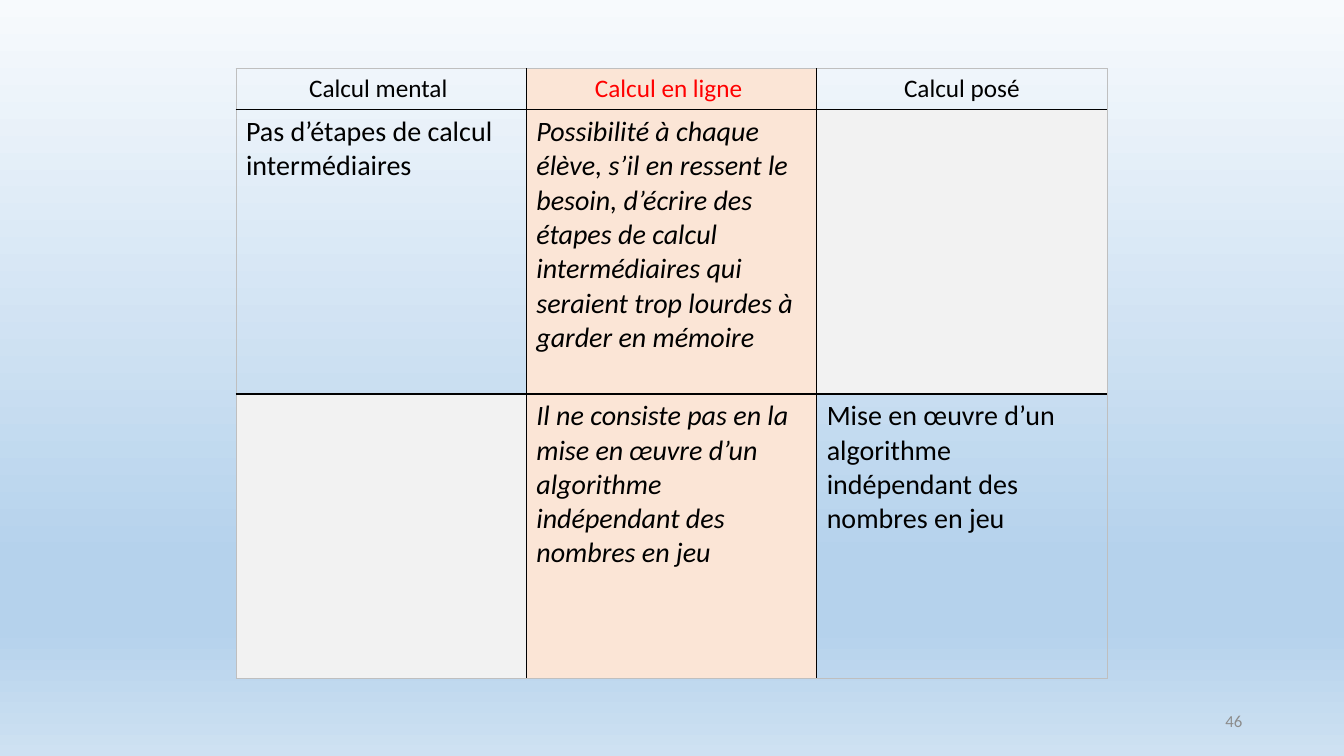
import lxml.etree
import pptx
import pptx.dml.color
import pptx.enum.text
import pptx.oxml
import pptx.oxml.ns
import pptx.util

# Content
HEADERS = ["Calcul mental ", "Calcul en ligne ", "Calcul posé"]
ROWS = [
    HEADERS,
    ["Pas d’étapes de calcul intermédiaires",
     "Possibilité à chaque élève, s’il en ressent le besoin, d’écrire des étapes de calcul "
     "intermédiaires qui seraient trop lourdes à garder en mémoire",
     ""],
    ["",
     "Il ne consiste pas en la mise en œuvre d’un algorithme indépendant des nombres en jeu",
     "Mise en œuvre d’un algorithme indépendant des nombres en jeu"],
]
PAGE_NUMBER = "46"

# Style and layout, in inches and points
FONT = "Calibri"
BLACK, RED, GREY = "000000", "FF0000", "8C8C8C"
HIGHLIGHT, EMPTY_CELL, OUTER_BORDER = "FBE5D6", "F2F2F2", "BFBFBF"
BACKGROUND_STOPS = [(0, "F7FAFD"), (74, "B5D2EC"), (83, "B5D2EC"), (100, "CEE1F2")]
TABLE_LEFT, TABLE_TOP = 2.34, 0.68
COLUMN_WIDTH = 2.88
ROW_HEIGHTS = [0.41, 2.82, 2.82]
HIGHLIGHT_COLUMN = 1


def color(hex_string):
    return pptx.dml.color.RGBColor.from_string(hex_string)


def add_run(paragraph, text, size, hex_string, italic=False):
    run = paragraph.add_run()
    run.text = text
    run.font.name = FONT
    run.font.size = pptx.util.Pt(size)
    run.font.italic = italic
    run.font.color.rgb = color(hex_string)


def add_border(cell, side, hex_string, points):
    line = pptx.oxml.parse_xml(
        f'<a:{side} {pptx.oxml.ns.nsdecls("a")} w="{pptx.util.Pt(points)}">'
        f'<a:solidFill><a:srgbClr val="{hex_string}"/></a:solidFill></a:{side}>')
    cell._tc.get_or_add_tcPr().append(line)


def set_background(slide):
    fill = slide.background.fill
    fill.gradient()
    fill.gradient_angle = 270
    stop_list = slide._element.find(".//" + pptx.oxml.ns.qn("a:gsLst"))
    for stop in list(stop_list):
        stop_list.remove(stop)
    for percent, hex_string in BACKGROUND_STOPS:
        stop = lxml.etree.SubElement(stop_list, pptx.oxml.ns.qn("a:gs"), pos=str(percent * 1000))
        lxml.etree.SubElement(stop, pptx.oxml.ns.qn("a:srgbClr"), val=hex_string)


def format_cell(cell, text, row, column):
    # Borders: black inside, thin grey around the table
    last_row, last_column = len(ROWS) - 1, len(HEADERS) - 1
    outer_sides = {"lnL": column == 0, "lnR": column == last_column,
                   "lnT": row == 0, "lnB": row == last_row}
    for side, is_outer in outer_sides.items():
        add_border(cell, side, *((OUTER_BORDER, 0.5) if is_outer else (BLACK, 1)))

    # Fill
    highlighted = column == HIGHLIGHT_COLUMN
    if highlighted or not text:
        cell.fill.solid()
        cell.fill.fore_color.rgb = color(HIGHLIGHT if highlighted else EMPTY_CELL)
    else:
        cell.fill.background()

    # Text
    if text:
        paragraph = cell.text_frame.paragraphs[0]
        if row == 0:
            paragraph.alignment = pptx.enum.text.PP_ALIGN.CENTER
            add_run(paragraph, text, 18, RED if highlighted else BLACK)
        else:
            add_run(paragraph, text, 20, BLACK, italic=highlighted)


def add_comparison_table(slide):
    inches = pptx.util.Inches
    table = slide.shapes.add_table(
        len(ROWS), len(HEADERS), inches(TABLE_LEFT), inches(TABLE_TOP),
        inches(COLUMN_WIDTH * len(HEADERS)), inches(sum(ROW_HEIGHTS))).table
    table.first_row = False
    table.horz_banding = False
    for column in table.columns:
        column.width = inches(COLUMN_WIDTH)
    for row, height in enumerate(ROW_HEIGHTS):
        table.rows[row].height = inches(height)
        for column, text in enumerate(ROWS[row]):
            format_cell(table.cell(row, column), text, row, column)


def add_page_number(slide):
    box = slide.shapes.add_textbox(*map(pptx.util.Inches, (9.42, 6.95, 3, 0.4)))
    frame = box.text_frame
    frame.word_wrap = True
    frame.vertical_anchor = pptx.enum.text.MSO_ANCHOR.MIDDLE
    paragraph = frame.paragraphs[0]
    paragraph.alignment = pptx.enum.text.PP_ALIGN.RIGHT
    add_run(paragraph, PAGE_NUMBER, 12, GREY)


def main():
    presentation = pptx.Presentation()
    presentation.slide_width = pptx.util.Inches(13.33)
    presentation.slide_height = pptx.util.Inches(7.5)
    slide = presentation.slides.add_slide(presentation.slide_layouts[6])
    set_background(slide)
    add_comparison_table(slide)
    add_page_number(slide)
    presentation.save("out.pptx")


if __name__ == "__main__":
    main()
